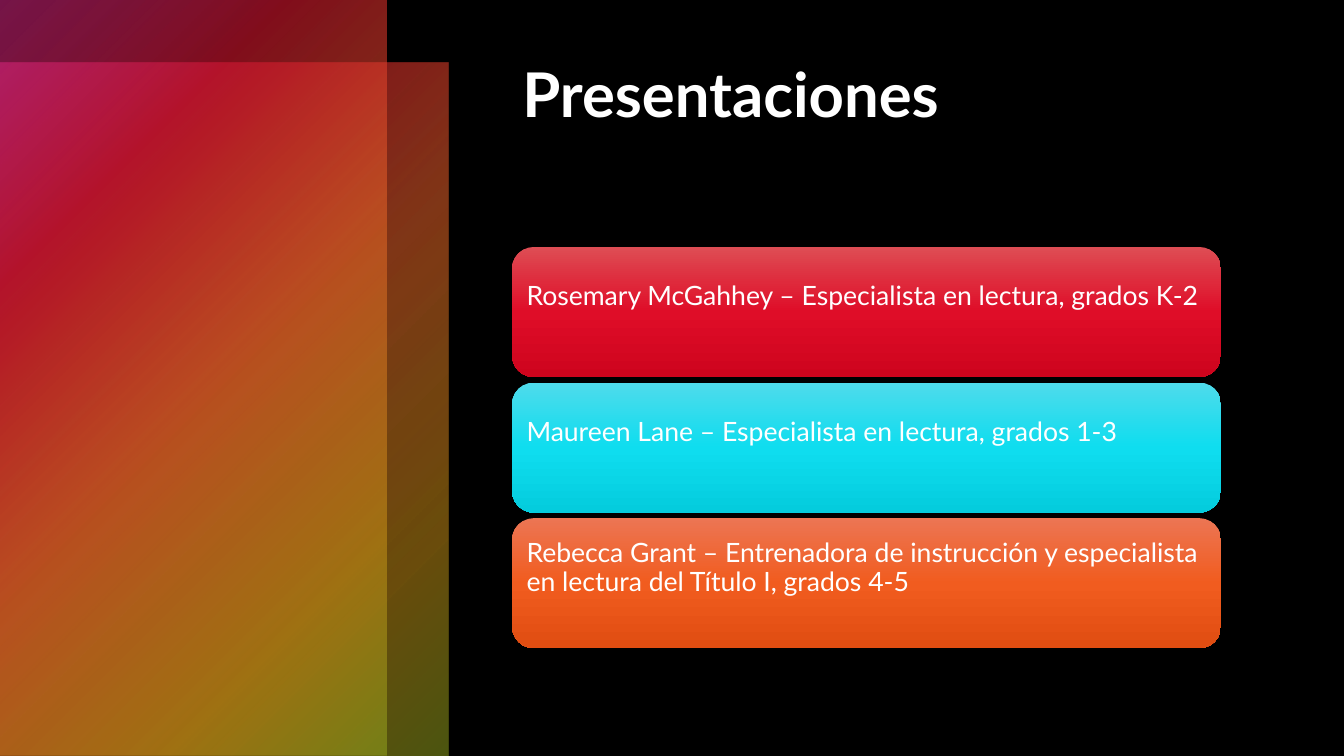
from dataclasses import dataclass

from lxml import etree
from pptx import Presentation
from pptx.dml.color import RGBColor
from pptx.enum import shapes, text
from pptx.oxml.ns import qn
from pptx.util import Inches, Pt

TITLE = "Presentaciones"
PRESENTERS = [
    ("Rosemary McGahhey – Especialista en lectura, grados K-2", "red"),
    ("Maureen Lane – Especialista en lectura, grados 1-3", "cyan"),
    ("Rebecca Grant – Entrenadora de instrucción y especialista "
     "en lectura del Título I, grados 4-5", "orange"),
]


@dataclass(frozen=True)
class Theme:
    font = "Lato"
    background = "000000"
    ink = "FFFFFF"
    title_size = 44
    card_size = 19
    panel = [(0, "E72990", 50), (25, "D5172F", 60), (50, "E76029", 55),
             (81, "CF9917", 50), (99, "9AAB1E", 50)]
    cards = {
        "red": [(0, "DE4D54", 100), (50, "DF0D28", 100), (100, "CE041D", 100)],
        "cyan": [(0, "4EDBEB", 100), (50, "0FDDEF", 100), (100, "04CCDD", 100)],
        "orange": [(0, "EC7553", 100), (50, "F15C1F", 100), (100, "E04D11", 100)],
    }


THEME = Theme()
WIDTH, HEIGHT = 13.33, 7.5
PANELS = [(0, 0.62, 4.45, 6.88), (0, 0, 3.83, 7.5)]
COLUMN_LEFT, COLUMN_WIDTH = 5.08, 7.03
CARDS_TOP, CARDS_BOTTOM, CARD_HEIGHT = 2.45, 6.43, 1.29


def write_text(shape, content, *, size, bold=False, anchor, margins, spacing=1.0):
    frame = shape.text_frame
    frame.word_wrap = True
    frame.auto_size = text.MSO_AUTO_SIZE.NONE
    frame.vertical_anchor = anchor
    (frame.margin_left, frame.margin_top,
     frame.margin_right, frame.margin_bottom) = map(Inches, margins)
    paragraph = frame.paragraphs[0]
    paragraph.alignment = text.PP_ALIGN.LEFT
    paragraph.line_spacing = spacing
    paragraph.space_before = Pt(0)
    run = paragraph.add_run()
    run.text = content
    run.font.name = THEME.font
    run.font.size = Pt(size)
    run.font.bold = bold
    run.font.color.rgb = RGBColor.from_string(THEME.ink)


def fill_gradient(shape, stops, diagonal):
    gradient = etree.Element(qn("a:gradFill"), rotWithShape="1")
    stop_list = etree.SubElement(gradient, qn("a:gsLst"))
    for position, color, opacity in stops:
        stop = etree.SubElement(stop_list, qn("a:gs"), pos=str(position * 1000))
        rgb = etree.SubElement(stop, qn("a:srgbClr"), val=color)
        if opacity < 100:
            etree.SubElement(rgb, qn("a:alpha"), val=str(opacity * 1000))
    if diagonal:
        circle = etree.SubElement(gradient, qn("a:path"), path="circle")
        etree.SubElement(circle, qn("a:fillToRect"), r="100000", b="100000")
    else:
        etree.SubElement(gradient, qn("a:lin"), ang="5400000", scaled="0")
    shape.element.spPr.find(qn("a:prstGeom")).addnext(gradient)


def add_gradient_shape(slide, kind, box, stops, diagonal=False):
    shape = slide.shapes.add_shape(kind, *map(Inches, box))
    fill_gradient(shape, stops, diagonal)
    shape.line.fill.background()
    shape.shadow.inherit = False
    return shape


def main():
    presentation = Presentation()
    presentation.slide_width = Inches(WIDTH)
    presentation.slide_height = Inches(HEIGHT)
    slide = presentation.slides.add_slide(presentation.slide_layouts[5])
    slide.background.fill.solid()
    slide.background.fill.fore_color.rgb = RGBColor.from_string(THEME.background)

    for box in PANELS:
        add_gradient_shape(slide, shapes.MSO_SHAPE.RECTANGLE, box, THEME.panel, diagonal=True)

    title = slide.shapes.title
    title.left, title.top = Inches(COLUMN_LEFT), Inches(0.5)
    title.width, title.height = Inches(COLUMN_WIDTH), Inches(1.7)
    write_text(title, TITLE, size=THEME.title_size, bold=True,
               anchor=text.MSO_ANCHOR.TOP, margins=(0.1, 0.05, 0.1, 0.05))

    pitch = (CARDS_BOTTOM - CARDS_TOP - CARD_HEIGHT) / (len(PRESENTERS) - 1)
    for index, (presenter, color) in enumerate(PRESENTERS):
        box = (COLUMN_LEFT, CARDS_TOP + index * pitch, COLUMN_WIDTH, CARD_HEIGHT)
        card = add_gradient_shape(slide, shapes.MSO_SHAPE.ROUNDED_RECTANGLE, box,
                                  THEME.cards[color])
        write_text(card, presenter, size=THEME.card_size, spacing=0.9,
                   anchor=text.MSO_ANCHOR.MIDDLE, margins=(0.08, 0.08, 0.08, 0.37))

    presentation.save("out.pptx")


if __name__ == "__main__":
    main()
